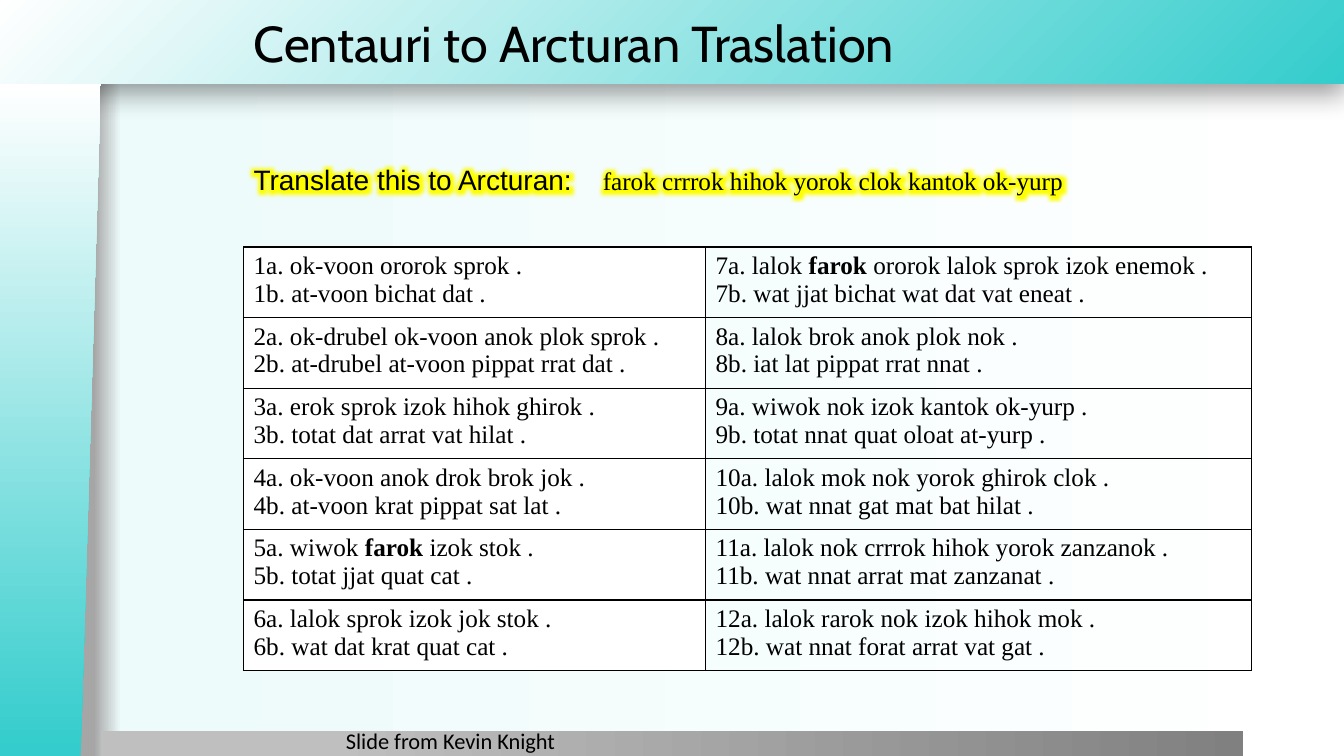
from lxml.etree import SubElement
from pptx import Presentation
from pptx.dml.color import RGBColor
from pptx.enum.shapes import MSO_SHAPE as Preset
from pptx.enum.text import MSO_ANCHOR as Anchor, PP_ALIGN as Align
from pptx.oxml import parse_xml
from pptx.oxml.ns import nsdecls, qn
from pptx.util import Pt

TITLE_FORMAT = {"name": "Cabin", "size": Pt(36)}
PROMPT_FORMAT = {"name": "Arial", "size": Pt(20)}
SENTENCE_FORMAT = {"name": "Times New Roman", "size": Pt(18)}
CREDIT_FORMAT = {"name": "Calibri", "size": Pt(16)}
KEYWORD = "farok"
LEFT_PAIRS = [
    ("ok-voon ororok sprok", "at-voon bichat dat"),
    ("ok-drubel ok-voon anok plok sprok", "at-drubel at-voon pippat rrat dat"),
    ("erok sprok izok hihok ghirok", "totat dat arrat vat hilat"),
    ("ok-voon anok drok brok jok", "at-voon krat pippat sat lat"),
    ("wiwok farok izok stok", "totat jjat quat cat"),
    ("lalok sprok izok jok stok", "wat dat krat quat cat"),
]
RIGHT_PAIRS = [
    ("lalok farok ororok lalok sprok izok enemok", "wat jjat bichat wat dat vat eneat"),
    ("lalok brok anok plok nok", "iat lat pippat rrat nnat"),
    ("wiwok nok izok kantok ok-yurp", "totat nnat quat oloat at-yurp"),
    ("lalok mok nok yorok ghirok clok", "wat nnat gat mat bat hilat"),
    ("lalok nok crrrok hihok yorok zanzanok", "wat nnat arrat mat zanzanat"),
    ("lalok rarok nok izok hihok mok", "wat nnat forat arrat vat gat"),
]


def rgb(value):
    """Return the colour for a hex string."""
    return RGBColor.from_string(value)


def place(part, box):
    """Move and size a part to a box in points."""
    part.left, part.top, part.width, part.height = map(Pt, box)


def add_run(paragraph, text, style, **extra):
    """Add black text with the given font format."""
    run = paragraph.add_run()
    run.text = text
    for key, value in {**style, **extra}.items():
        setattr(run.font, key, value)
    run.font.color.rgb = rgb("000000")
    return run


def set_gradient(fill, owner, stops, corner=False):
    """Give the owner's fill a horizontal or bottom-right corner gradient."""
    fill.gradient()
    gradient = next(owner.iter(qn("a:gradFill")))
    marks = "".join(
        f'<a:gs pos="{position * 1000}"><a:srgbClr val="{colour}"/></a:gs>'
        for position, colour in stops
    )
    direction = '<a:lin ang="0" scaled="0"/>'
    if corner:
        direction = '<a:path path="circle"><a:fillToRect l="100000" t="100000"/></a:path>'
    gradient.getparent().replace(gradient, parse_xml(
        f'<a:gradFill rotWithShape="1" {nsdecls("a")}><a:gsLst>{marks}</a:gsLst>{direction}</a:gradFill>'
    ))


def add_bar(slide, preset, box, stops, corner=False):
    """Add an unoutlined gradient bar."""
    bar = slide.shapes.add_shape(preset, *map(Pt, box))
    bar.shadow.inherit = False
    bar.line.fill.background()
    set_gradient(bar.fill, bar.element.spPr, stops, corner)
    return bar


def add_frame(slide, width, height):
    """Draw the background and the top, bottom and left bars."""
    set_gradient(slide.background.fill, slide.element,
                 [(7, "A6A6A6"), (9, "EDFBFB"), (100, "FFFFFF")])
    header = add_bar(slide, Preset.RECTANGLE, (0, 0, width, 60),
                     [(0, "34CCCC"), (100, "FFFFFF")], corner=True)
    header.element.spPr.find(qn("a:effectLst")).append(parse_xml(
        f'<a:outerShdw blurRad="{Pt(20)}" dist="{Pt(6)}" dir="5400000" {nsdecls("a")}>'
        '<a:srgbClr val="000000"><a:alpha val="40000"/></a:srgbClr></a:outerShdw>'
    ))
    add_bar(slide, Preset.RECTANGLE, (72, height - 18, 816, 18),
            [(20, "BFBFBF"), (100, "808080")])
    length, depth = height - 60, 72
    side = add_bar(slide, Preset.FLOWCHART_MANUAL_INPUT,
                   ((depth - length) / 2, 60 + (length - depth) / 2, length, depth),
                   [(1, "34CCCC"), (100, "FFFFFF")])
    side.rotation = 270
    side.element.spPr.find(qn("a:xfrm")).set("flipV", "1")


def add_title(slide, box):
    """Place the title over the top bar."""
    title = slide.shapes.title
    slide.shapes.element.append(title.element)
    place(title, box)
    title.text_frame.vertical_anchor = Anchor.MIDDLE
    paragraph = title.text_frame.paragraphs[0]
    paragraph.alignment = Align.LEFT
    add_run(paragraph, "Centauri to Arcturan Traslation", TITLE_FORMAT)


def add_text_line(slide, box):
    """Add a text box and return its only paragraph."""
    frame = slide.shapes.add_textbox(*map(Pt, box)).text_frame
    frame.word_wrap = True
    return frame.paragraphs[0]


def add_prompt(slide, box):
    """Add the glowing sentence to translate."""
    paragraph = add_text_line(slide, box)
    tabs = SubElement(paragraph._p.get_or_add_pPr(), qn("a:tabLst"))
    SubElement(tabs, qn("a:tab"), pos=str(Pt(249.5)), algn="l")
    for text, style in (("Translate this to Arcturan:\t", PROMPT_FORMAT),
                        ("farok crrrok hihok yorok clok kantok ok-yurp", SENTENCE_FORMAT)):
        run = add_run(paragraph, text, style)
        run.font.fill._xPr.find(qn("a:solidFill")).addnext(parse_xml(
            f'<a:effectLst {nsdecls("a")}><a:glow rad="{Pt(18)}">'
            '<a:srgbClr val="FFFF00"/></a:glow></a:effectLst>'
        ))


def fill_cell(cell, number, pair):
    """Write a numbered sentence pair and border its cell."""
    for index, (letter, sentence) in enumerate(zip("ab", pair)):
        frame = cell.text_frame
        paragraph = frame.add_paragraph() if index else frame.paragraphs[0]
        before, keyword, after = f"{number}{letter}. {sentence} .".partition(KEYWORD)
        add_run(paragraph, before, SENTENCE_FORMAT)
        if keyword:
            add_run(paragraph, keyword, SENTENCE_FORMAT, bold=True)
            add_run(paragraph, after, SENTENCE_FORMAT)
    properties = cell._tc.get_or_add_tcPr()
    for position, side in enumerate(("lnL", "lnR", "lnT", "lnB")):
        properties.insert(position, parse_xml(
            f'<a:{side} w="{Pt(1)}" {nsdecls("a")}>'
            f'<a:solidFill><a:srgbClr val="000000"/></a:solidFill></a:{side}>'
        ))


def add_corpus(slide, box):
    """Add the table of parallel sentences."""
    rows = len(LEFT_PAIRS)
    table = slide.shapes.add_table(rows, 2, *map(Pt, box)).table
    table.first_row = table.horz_banding = False
    for column, width in zip(table.columns, (330, 390)):
        column.width = Pt(width)
    for column, pairs in enumerate((LEFT_PAIRS, RIGHT_PAIRS)):
        for row, pair in enumerate(pairs):
            cell = table.cell(row, column)
            if column:
                cell.fill.background()
            else:
                cell.fill.solid()
                cell.fill.fore_color.rgb = rgb("FFFFFF")
            fill_cell(cell, column * rows + row + 1, pair)


def main():
    """Build and save the translation slide."""
    deck = Presentation()
    width, height = 960, 540
    deck.slide_width, deck.slide_height = Pt(width), Pt(height)
    slide = deck.slides.add_slide(deck.slide_layouts[5])
    add_frame(slide, width, height)
    add_title(slide, (174, 0, 666, 60))
    credit = add_text_line(slide, (240, 516, 180, 24))
    add_run(credit, "Slide from Kevin Knight", CREDIT_FORMAT)
    add_corpus(slide, (174, 176.4, 720, 302.4))
    add_prompt(slide, (174, 112.5, 610, 31.5))
    deck.save("out.pptx")


if __name__ == "__main__":
    main()
